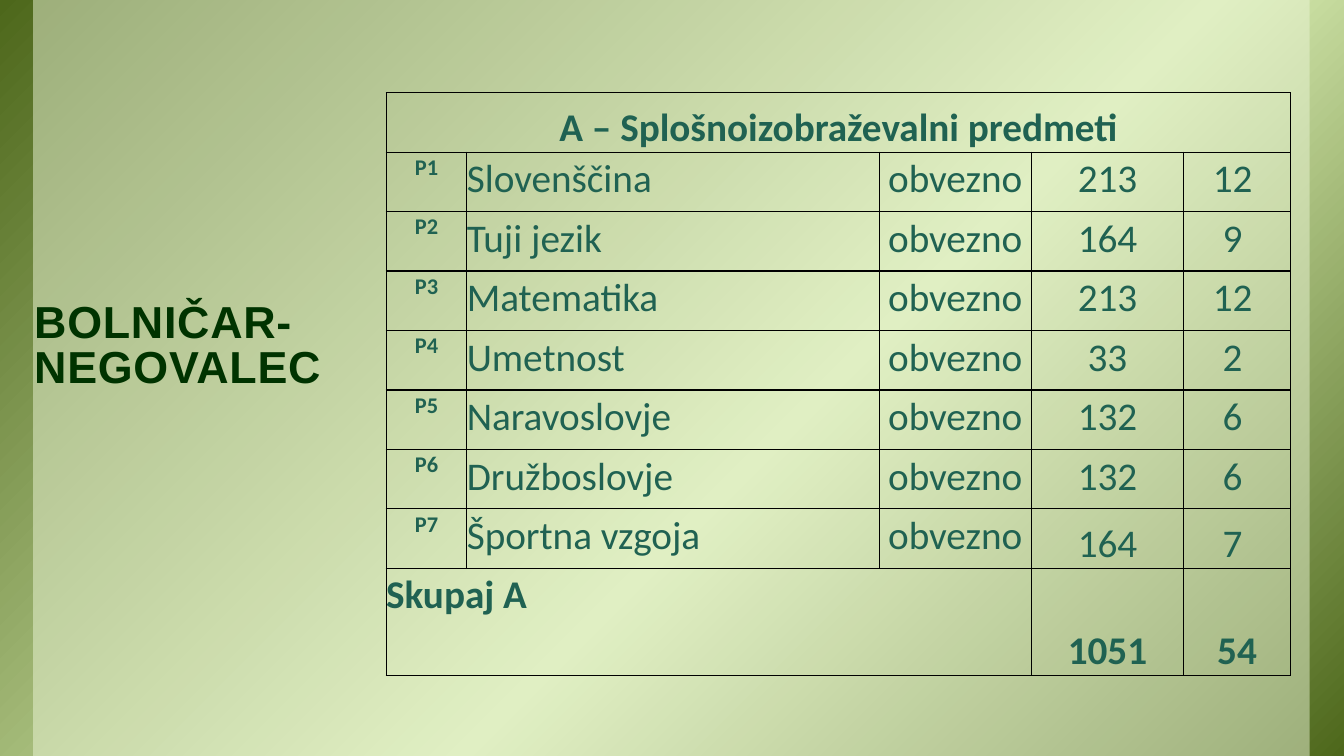
from dataclasses import dataclass
from lxml.etree import SubElement
from pptx import Presentation
from pptx.dml.color import RGBColor
from pptx.enum.shapes import MSO_SHAPE
from pptx.enum.text import MSO_ANCHOR, PP_ALIGN
from pptx.oxml import parse_xml
from pptx.oxml.ns import nsdecls, qn
from pptx.util import Inches, Pt

BLACK = RGBColor(0x00, 0x00, 0x00)
DEEP = RGBColor(0x00, 0x33, 0x00)
TEAL = RGBColor(0x20, 0x62, 0x52)
PALE = RGBColor(0xEB, 0xF5, 0xD7)
MOSS = RGBColor(0x4D, 0x67, 0x1B)
LIME = RGBColor(0xD6, 0xEA, 0xAF)

WIDE, HIGH = 13.33, 7.5
COLS = [0.8, 4.09, 1.51, 1.51, 1.06]
ROWS = [0.59] * 8 + [1.06]
SIDES = ("a:lnL", "a:lnR", "a:lnT", "a:lnB")


@dataclass
class Entry:
    text: str
    size: int = 28
    bold: bool = False
    align: PP_ALIGN = PP_ALIGN.CENTER
    anchor: MSO_ANCHOR = MSO_ANCHOR.TOP
    span: int = 1


@dataclass
class Course:
    name: str
    hours: int
    points: int
    anchor: MSO_ANCHOR = MSO_ANCHOR.TOP


COURSES = [
    Course("Slovenščina", 213, 12),
    Course("Tuji jezik", 164, 9),
    Course("Matematika", 213, 12),
    Course("Umetnost", 33, 2),
    Course("Naravoslovje", 132, 6),
    Course("Družboslovje", 132, 6),
    Course("Športna vzgoja", 164, 7, MSO_ANCHOR.BOTTOM),
]


def add_rect(slide, left: float, width: float):
    """Add a full-height rectangle without line or shadow."""
    rect = slide.shapes.add_shape(
        MSO_SHAPE.RECTANGLE, Inches(left), 0, Inches(width), Inches(HIGH))
    rect.shadow.inherit = False
    rect.line.fill.background()
    return rect


def add_run(para, text: str, font: str, size: int, color: RGBColor, bold: bool):
    run = para.add_run()
    run.text = text
    run.font.name = font
    run.font.size = Pt(size)
    run.font.bold = bold
    run.font.color.rgb = color
    return run


def add_back(slide) -> None:
    # Diagonal gradient
    base = add_rect(slide, 0, WIDE)
    stops = "".join(
        f'<a:gs pos="{pos * 1000}"><a:srgbClr val="{color}"/></a:gs>'
        for pos, color in ((0, MOSS), (58, LIME), (100, MOSS)))
    grad = parse_xml(
        f'<a:gradFill {nsdecls("a")} rotWithShape="1"><a:gsLst>{stops}</a:gsLst>'
        '<a:lin ang="2700000" scaled="0"/></a:gradFill>')
    base.element.spPr.find(qn("a:prstGeom")).addnext(grad)

    # Half-clear panel
    panel = add_rect(slide, 0.33, 12.66)
    panel.fill.solid()
    panel.fill.fore_color.rgb = PALE
    color = panel.element.spPr.find(qn("a:solidFill"))[0]
    SubElement(color, qn("a:alpha")).set("val", "50000")


def add_title(slide) -> None:
    box = slide.shapes.add_textbox(
        Inches(0.21), Inches(2.18), Inches(3.23), Inches(2.53))
    frame = box.text_frame
    frame.word_wrap = True
    frame.vertical_anchor = MSO_ANCHOR.BOTTOM
    frame.margin_left = frame.margin_right = Inches(0.13)
    frame.margin_top, frame.margin_bottom = Inches(0.07), Inches(0.81)
    para = frame.paragraphs[0]
    para.line_spacing = 0.85
    run = add_run(para, "BOLNIČAR-NEGOVALEC", "Arial", 32, DEEP, True)
    run.font._element.set("spc", "50")


def frame_cell(cell) -> None:
    """Give a cell black borders and no fill."""
    props = cell._tc.get_or_add_tcPr()
    for side in SIDES:
        line = SubElement(props, qn(side), w=str(Pt(1)))
        fill = SubElement(line, qn("a:solidFill"))
        SubElement(fill, qn("a:srgbClr"), val=str(BLACK))
    cell.fill.background()


def fill_cell(cell, entry: Entry) -> None:
    cell.margin_left = cell.margin_right = 0
    cell.margin_top = cell.margin_bottom = 0
    cell.vertical_anchor = entry.anchor
    para = cell.text_frame.paragraphs[0]
    para.alignment = entry.align
    para.line_spacing = 1.07
    add_run(para, entry.text, "Calibri", entry.size, TEAL, entry.bold)


def list_rows() -> list[list[Entry]]:
    low = MSO_ANCHOR.BOTTOM
    rows = [[Entry("A – Splošnoizobraževalni predmeti", bold=True, anchor=low, span=5)]]
    for num, course in enumerate(COURSES, 1):
        rows.append([
            Entry(f"P{num}", size=16, bold=True),
            Entry(course.name, align=PP_ALIGN.LEFT),
            Entry("obvezno"),
            Entry(f"{course.hours}", anchor=course.anchor),
            Entry(f"{course.points} ", anchor=course.anchor),
        ])
    rows.append([
        Entry("Skupaj A", bold=True, align=PP_ALIGN.LEFT, span=3),
        Entry("1051", bold=True, anchor=low),
        Entry("54", bold=True, anchor=low),
    ])
    return rows


def add_grid(slide) -> None:
    table = slide.shapes.add_table(
        len(ROWS), len(COLS), Inches(3.83), Inches(0.92),
        Inches(sum(COLS)), Inches(sum(ROWS))).table
    table.first_row = table.horz_banding = False
    for col, width in zip(table.columns, COLS):
        col.width = Inches(width)
    for row, height in zip(table.rows, ROWS):
        row.height = Inches(height)
    for cell in table.iter_cells():
        frame_cell(cell)
    for y, entries in enumerate(list_rows()):
        x = 0
        for entry in entries:
            cell = table.cell(y, x)
            if entry.span > 1:
                cell.merge(table.cell(y, x + entry.span - 1))
            fill_cell(cell, entry)
            x += entry.span


def main() -> None:
    deck = Presentation()
    deck.slide_width, deck.slide_height = Inches(WIDE), Inches(HIGH)
    slide = deck.slides.add_slide(deck.slide_layouts[6])
    add_back(slide)
    add_title(slide)
    add_grid(slide)
    deck.save("out.pptx")


if __name__ == "__main__":
    main()
